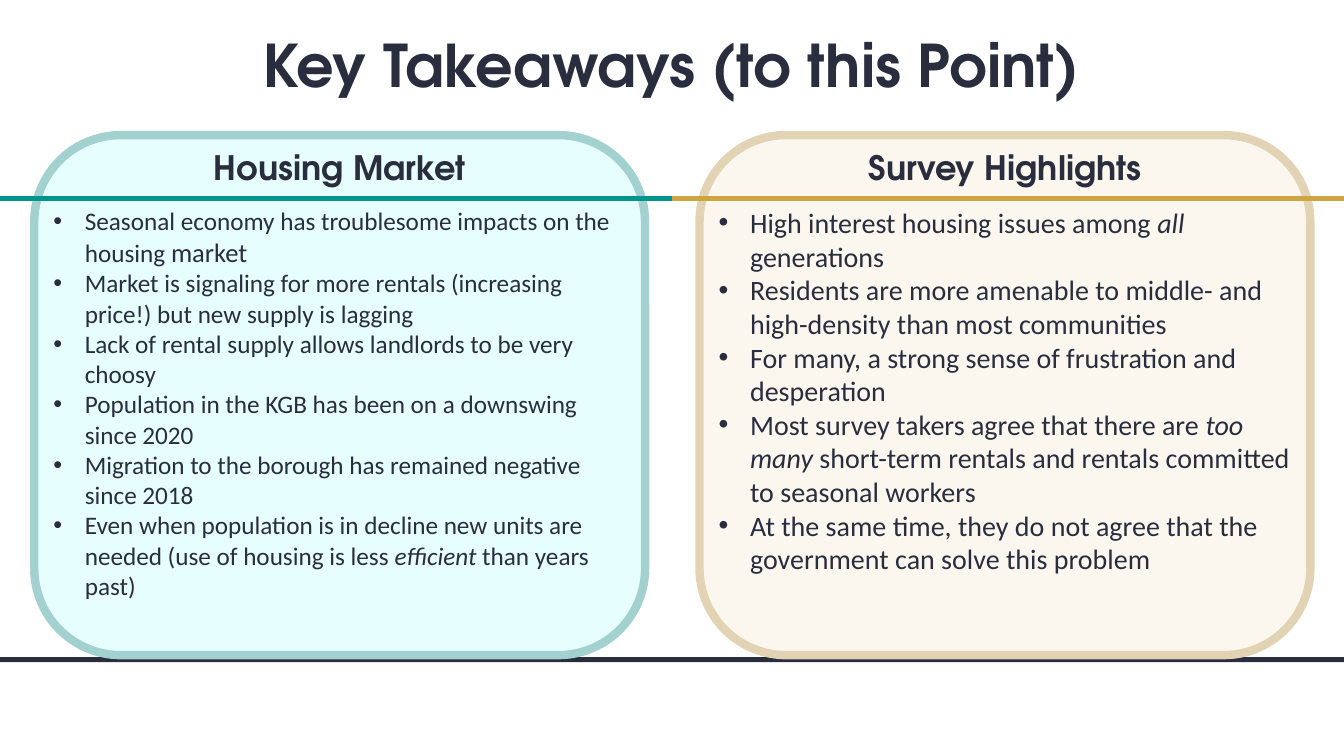
from lxml import etree
from pptx import Presentation
from pptx.dml.color import RGBColor
from pptx.enum.shapes import MSO_CONNECTOR, MSO_SHAPE
from pptx.enum.text import MSO_ANCHOR, PP_ALIGN
from pptx.oxml.ns import qn
from pptx.util import Pt

RECT = MSO_SHAPE.RECTANGLE
ROUND = MSO_SHAPE.ROUNDED_RECTANGLE
LINE = MSO_CONNECTOR.STRAIGHT
BOTTOM = MSO_ANCHOR.BOTTOM
CENTER = PP_ALIGN.CENTER

WIDE, HIGH = 960, 540
INK = "292D3D"
HEAD, BODY = "TeX Gyre Adventor", "Calibri"
LEFT, STEP = 24.5, 475.2

# Asterisks enclose italic words.
MARKET = [
    "Seasonal economy has troublesome impacts on the housing ",
    "Market is signaling for more rentals (increasing price!) but new supply is lagging",
    "Lack of rental supply allows landlords to be very choosy",
    "Population in the KGB has been on a downswing since 2020",
    "Migration to the borough has remained negative since 2018",
    "Even when population is in decline new units are needed "
    "(use of housing is less *efficient *than years past)",
]
SURVEY = [
    "High interest housing issues among *all *generations",
    "Residents are more amenable to middle- and high-density than most communities",
    "For many, a strong sense of frustration and desperation",
    "Most survey takers agree that there are *too many *short-term rentals "
    "and rentals committed to seasonal workers",
    "At the same time, they do not agree that the government can solve this problem",
]


def color(code):
    return RGBColor.from_string(code)


def style(font, name, size, bold=False):
    font.name = name
    font.size = Pt(size)
    font.bold = bold
    font.color.rgb = color(INK)


def add_panel(slide, kind, x, y, w, h, fill):
    panel = slide.shapes.add_shape(kind, Pt(x), Pt(y), Pt(w), Pt(h))
    panel.shadow.inherit = False
    panel.fill.solid()
    panel.fill.fore_color.rgb = color(fill)
    panel.line.fill.background()
    return panel


def add_card(slide, x, fill, edge):
    """Add a rounded card with a 40% opaque fill."""
    card = add_panel(slide, ROUND, x, 96.5, 436.3, 371.5, fill)
    tone = card.fill._xPr.find(qn("a:solidFill"))[0]
    etree.SubElement(tone, qn("a:alpha"), val="40000")
    card.line.color.rgb = color(edge)
    card.line.width = Pt(6)


def add_frame(slide, x, y, w, h):
    frame = slide.shapes.add_textbox(Pt(x), Pt(y), Pt(w), Pt(h)).text_frame
    frame.word_wrap = True
    return frame


def add_title(slide, text, x, y, w, size):
    frame = add_frame(slide, x, y, w, 54)
    frame.vertical_anchor = BOTTOM
    para = frame.paragraphs[0]
    para.text = text
    para.alignment = CENTER
    para.line_spacing = 0.9
    style(para.font, HEAD, size, True)


def add_bullet(para):
    props = para._p.get_or_add_pPr()
    props.set("marL", str(Pt(22.5)))
    props.set("indent", str(-Pt(22.5)))
    etree.SubElement(props, qn("a:buFont"), typeface="Arial")
    etree.SubElement(props, qn("a:buChar"), char="•")


def add_list(slide, items, x, size):
    frame = add_frame(slide, x, 143.3, 422.6, 295)
    for i, item in enumerate(items):
        para = frame.add_paragraph() if i else frame.paragraphs[0]
        add_bullet(para)
        style(para.font, BODY, size)
        for j, part in enumerate(item.split("*")):
            run = para.add_run()
            run.text = part
            if j % 2:
                run.font.italic = True
    return frame


def add_rule(slide, x, tone):
    y = Pt(141.8)
    rule = slide.shapes.add_connector(LINE, Pt(x), y, Pt(x + WIDE / 2), y)
    rule.line.color.rgb = color(tone)
    rule.line.width = Pt(3)
    etree.SubElement(rule._element.spPr, qn("a:effectLst"))


def main():
    deck = Presentation()
    deck.slide_width, deck.slide_height = Pt(WIDE), Pt(HIGH)
    slide = deck.slides.add_slide(deck.slide_layouts[6])

    add_panel(slide, RECT, 0, 469.4, WIDE, 3.6, INK)
    add_title(slide, "Key Takeaways (to this Point)", 146.2, 20.9, 666.7, 42)

    columns = [
        ("Housing Market", MARKET, 18, "C1FFFD", "A3D1D0", "00948F"),
        ("Survey Highlights", SURVEY, 20, "F5EDD9", "E1D3B3", "CDA642"),
    ]
    frames = []
    for i, (head, items, size, fill, edge, tone) in enumerate(columns):
        x = LEFT + i * STEP
        add_card(slide, x, fill, edge)
        frames.append(add_list(slide, items, x + 6.5, size))
        add_title(slide, head, x + 53.3, 83.5, 329.8, 24)
        add_rule(slide, i * WIDE / 2, tone)

    last = frames[0].paragraphs[0].add_run()
    last.text = "market"
    last.font.size = Pt(19)

    deck.save("out.pptx")


if __name__ == "__main__":
    main()
